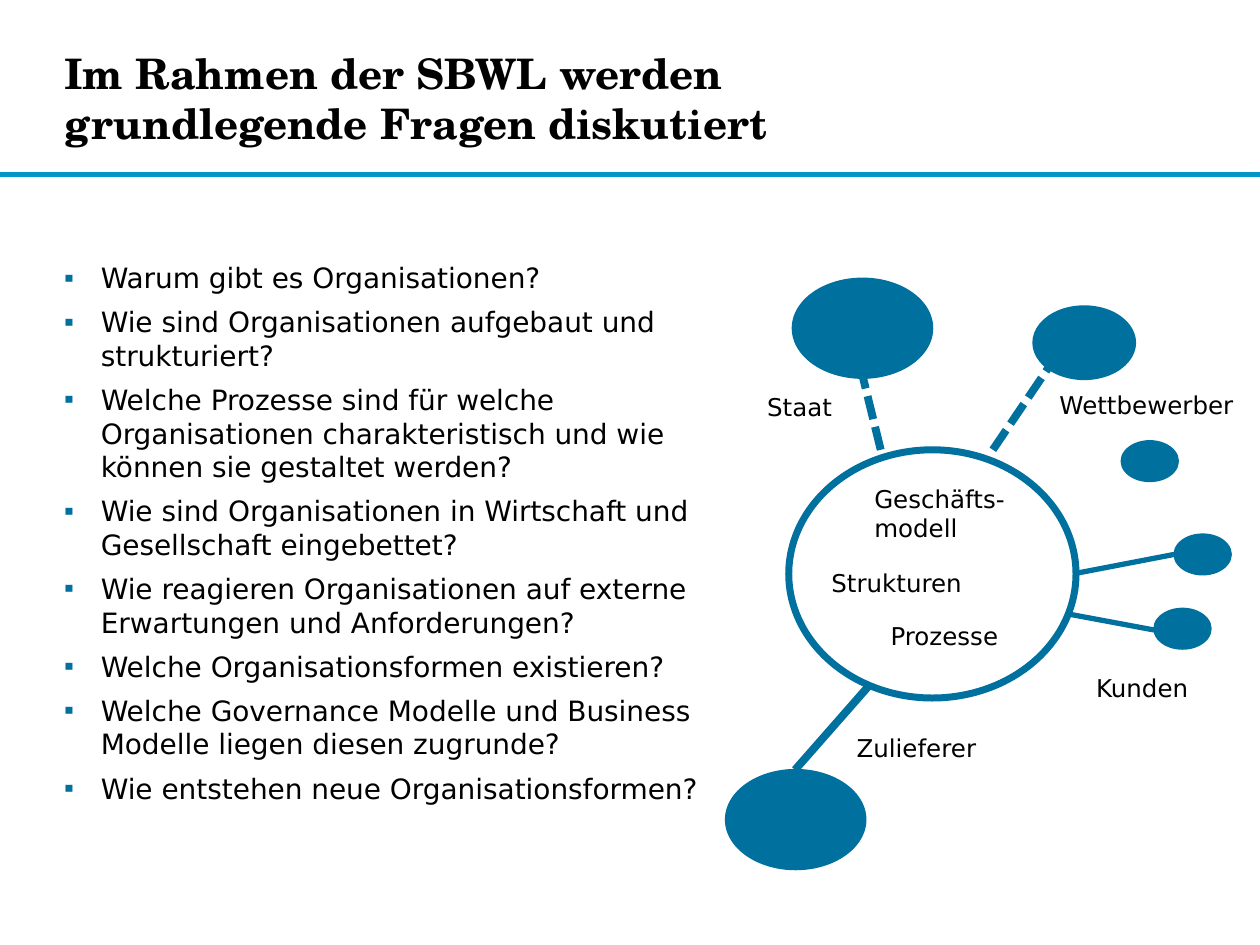
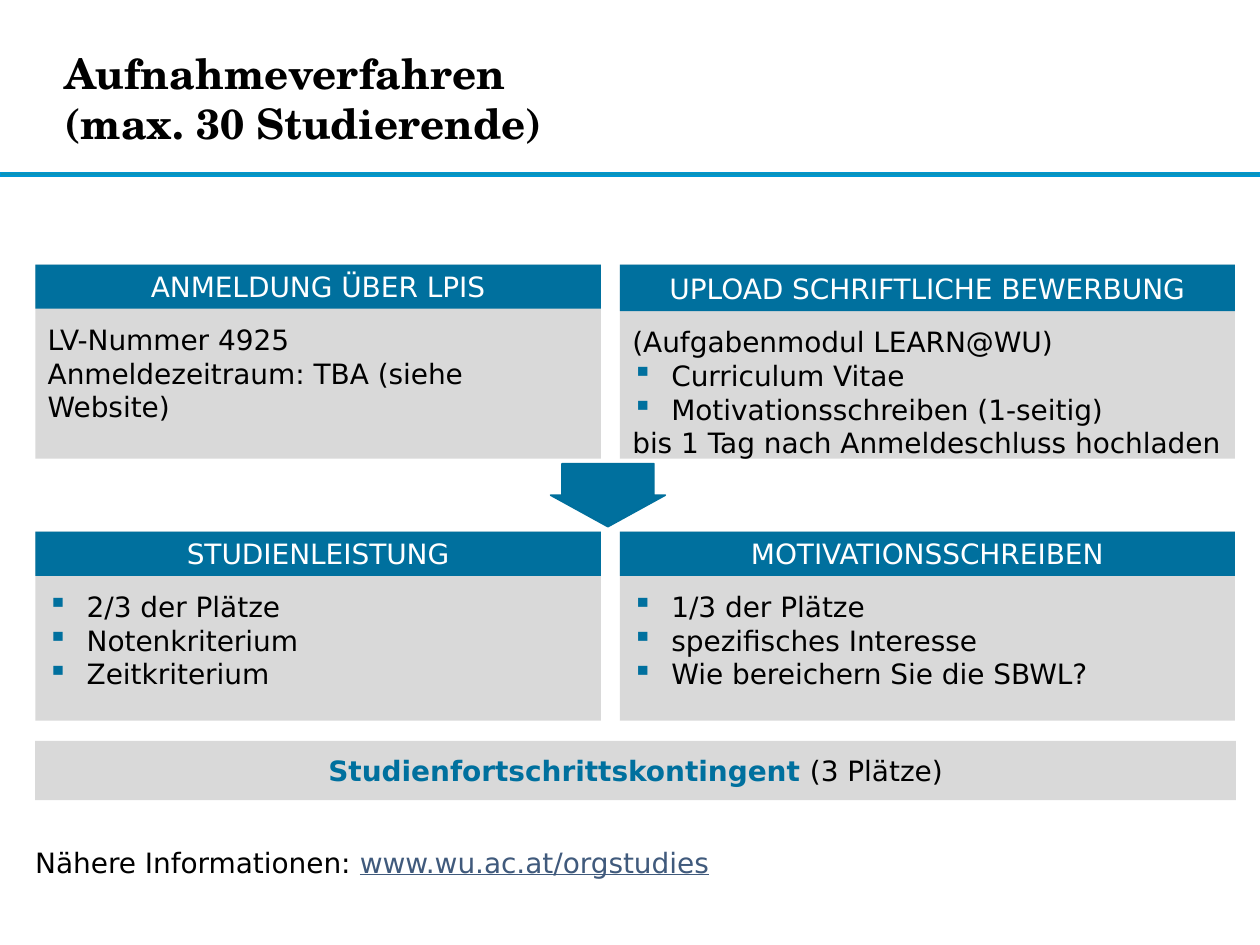
from lxml.etree import SubElement
from pptx import Presentation
from pptx.dml.color import RGBColor
from pptx.enum.dml import MSO_LINE
from pptx.enum.shapes import MSO_CONNECTOR, MSO_SHAPE
from pptx.enum.text import MSO_ANCHOR, MSO_AUTO_SIZE, PP_ALIGN
from pptx.oxml.ns import qn
from pptx.util import Inches, Pt

rgb = RGBColor.from_string
BLUE, GREY, BLACK, WHITE = "00709E", "D9D9D9", "000000", "FFFFFF"
BODY_FONT, TITLE_FONT = "DejaVu Sans", "TeX Gyre Schola"
BULLET = "▪"


def add_figure(slide, preset, at, fill, line=None, width=1):
    figure = slide.shapes.add_shape(preset, *map(Inches, at))
    figure.shadow.inherit = False
    figure.fill.solid()
    figure.fill.fore_color.rgb = rgb(fill)
    if line:
        figure.line.color.rgb = rgb(line)
        figure.line.width = Pt(width)
    else:
        figure.line.fill.background()
    return figure


def write(frame, lines, size=16, color=BLACK, font=BODY_FONT, bold=False,
          align=PP_ALIGN.LEFT, indent=0.31, after=0):
    """Fill a text frame; lines that start with the bullet sign become list items."""
    frame.text = "\n".join(line.removeprefix(BULLET) for line in lines)
    for paragraph, line in zip(frame.paragraphs, lines):
        paragraph.alignment = align
        paragraph.space_before, paragraph.space_after = Pt(0), Pt(after)
        if line.startswith(BULLET):
            props = paragraph._p.get_or_add_pPr()
            props.set("marL", str(Inches(indent)))
            props.set("indent", str(-Inches(indent)))
            SubElement(SubElement(props, qn("a:buClr")), qn("a:srgbClr"), val=BLUE)
            SubElement(props, qn("a:buChar"), char=BULLET)
        for run in paragraph.runs:
            run.font.size, run.font.name, run.font.bold = Pt(size), font, bold
            run.font.color.rgb = rgb(color)


prs = Presentation()
prs.slide_width, prs.slide_height = Inches(10), Inches(7.5)
questions_slide = prs.slides.add_slide(prs.slide_layouts[1])
admission_slide = prs.slides.add_slide(prs.slide_layouts[5])

# Shared: rule under the title, moved to the master, and the title style
title_rule = add_figure(questions_slide, MSO_SHAPE.RECTANGLE, (0, 1.37, 10, 0.03),
                        "0C94B7", "0096D3")
title_rule.element.nvSpPr.cNvPr.set("id", "20")
prs.slide_master.shapes.element.append(title_rule.element)

for slide, heading in (
    (questions_slide, "Im Rahmen der SBWL werden grundlegende Fragen diskutiert"),
    (admission_slide, "Aufnahmeverfahren\v(max. 30 Studierende)"),
):
    title = slide.shapes.title
    title.left, title.top, title.width, title.height = map(Inches, (0.51, 0.18, 7.27, 1.19))
    frame = title.text_frame
    frame.margin_left = frame.margin_right = frame.margin_top = frame.margin_bottom = 0
    frame.vertical_anchor = MSO_ANCHOR.MIDDLE
    frame.auto_size = MSO_AUTO_SIZE.NONE
    write(frame, [heading], 24, font=TITLE_FONT, bold=True)

# Slide 1: questions
questions = questions_slide.placeholders[1]
questions.left, questions.top, questions.width, questions.height = map(
    Inches, (0.51, 2.02, 5.21, 4.79))
frame = questions.text_frame
frame.margin_left = frame.margin_right = 0
frame.auto_size = MSO_AUTO_SIZE.NONE
write(frame, [BULLET + question for question in (
    "Warum gibt es Organisationen?",
    "Wie sind Organisationen aufgebaut und strukturiert?",
    "Welche Prozesse sind für welche Organisationen charakteristisch "
    "und wie können sie gestaltet werden?",
    "Wie sind Organisationen in Wirtschaft und Gesellschaft eingebettet?",
    "Wie reagieren Organisationen auf externe Erwartungen und Anforderungen?",
    "Welche Organisationsformen existieren?",
    "Welche Governance Modelle und Business Modelle liegen diesen zugrunde?",
    "Wie entstehen neue Organisationsformen?",
)], indent=0.29, after=6)

# Slide 1: organisation and its environment
add_figure(questions_slide, MSO_SHAPE.OVAL, (6.26, 3.57, 2.28, 1.97), WHITE, BLUE, 4)
large, medium, small = (1.11, 0.79), (0.81, 0.58), (0.45, 0.32)
for left, top, size in (
    (8.2, 2.43, medium),
    (6.29, 2.21, large),
    (5.76, 6.11, large),
    (8.9, 3.5, small),
    (9.16, 4.83, small),
    (9.32, 4.24, small),
):
    add_figure(questions_slide, MSO_SHAPE.OVAL, (left, top, *size), BLUE, BLUE)

for left, top, width, height, lines in (
    (6.97, 4.88, 1.07, 0.34, ["Prozesse"]),
    (6.5, 4.46, 1.27, 0.34, ["Strukturen"]),
    (6.7, 5.77, 1.16, 0.34, ["Zulieferer"]),
    (8.6, 5.29, 0.95, 0.34, ["Kunden"]),
    (8.31, 3.05, 1.59, 0.34, ["Wettbewerber"]),
    (5.99, 3.06, 0.73, 0.34, ["Staat"]),
    (6.84, 3.79, 1.25, 0.57, ["Geschäfts-", "modell"]),
):
    label = questions_slide.shapes.add_textbox(*map(Inches, (left, top, width, height)))
    label.text_frame.word_wrap = False
    label.text_frame.auto_size = MSO_AUTO_SIZE.SHAPE_TO_FIT_TEXT
    write(label.text_frame, lines, 14)

for ends, width, dashed in (
    ((6.31, 6.11, 6.89, 5.45), 4.5, False),
    ((8.46, 4.87, 9.16, 5), 3, False),
    ((8.54, 4.55, 9.32, 4.4), 3, False),
    ((6.99, 3.57, 6.85, 3), 4.5, True),
    ((7.88, 3.57, 8.32, 2.92), 4.5, True),
):
    relation = questions_slide.shapes.add_connector(MSO_CONNECTOR.STRAIGHT, *map(Inches, ends))
    relation.line.color.rgb = rgb(BLUE)
    relation.line.width = Pt(width)
    if dashed:
        relation.line.dash_style = MSO_LINE.SQUARE_DOT
    SubElement(relation.element.spPr, qn("a:effectLst"))

# Slide 2: four panels, each with a header strip
left_column, right_column = (0.28, 4.49), (4.92, 4.88)
for (left, width), top, height, strip_height, heading, lines in (
    (left_column, 2.1, 1.54, 0.35, "ANMELDUNG ÜBER LPIS",
     ["LV-Nummer 4925", "Anmeldezeitraum: TBA (siehe Website)"]),
    (right_column, 2.1, 1.54, 0.37, "UPLOAD SCHRIFTLICHE BEWERBUNG",
     ["(Aufgabenmodul LEARN@WU)", "▪Curriculum Vitae",
      "▪Motivationsschreiben (1-seitig)", "bis 1 Tag nach Anmeldeschluss hochladen"]),
    (left_column, 4.22, 1.5, 0.35, "STUDIENLEISTUNG",
     ["▪2/3 der Plätze", "▪Notenkriterium", "▪Zeitkriterium"]),
    (right_column, 4.22, 1.5, 0.35, "MOTIVATIONSSCHREIBEN",
     ["▪1/3 der Plätze", "▪spezifisches Interesse", "▪Wie bereichern Sie die SBWL?"]),
):
    panel = add_figure(admission_slide, MSO_SHAPE.RECTANGLE, (left, top, width, height), GREY)
    panel.text_frame.vertical_anchor = MSO_ANCHOR.TOP
    panel.text_frame.margin_top = Inches(strip_height + 0.11)
    panel.text_frame.margin_bottom = 0
    write(panel.text_frame, lines)
    strip = add_figure(admission_slide, MSO_SHAPE.RECTANGLE,
                       (left, top, width, strip_height), BLUE)
    write(strip.text_frame, [heading], color=WHITE, align=PP_ALIGN.CENTER)

step_arrow = add_figure(admission_slide, MSO_SHAPE.DOWN_ARROW, (4.37, 3.68, 0.91, 0.5),
                        BLUE, "006F9C")
step_arrow.adjustments[0] = 0.8
step_arrow.adjustments[1] = 0.5

# Slide 2: extra quota and further information
quota = add_figure(admission_slide, MSO_SHAPE.RECTANGLE, (0.28, 5.88, 9.53, 0.47), GREY)
write(quota.text_frame, ["Studienfortschrittskontingent "], color=BLUE, bold=True,
      align=PP_ALIGN.CENTER)
places = quota.text_frame.paragraphs[0].add_run()
places.text = "(3 Plätze)"
places.font.color.rgb = rgb(BLACK)

information = admission_slide.shapes.add_textbox(*map(Inches, (0.28, 6.66, 7.4, 0.43)))
information.text_frame.word_wrap = True
information.text_frame.margin_left = information.text_frame.margin_right = 0
write(information.text_frame, ["Nähere Informationen: "])
address = information.text_frame.paragraphs[0].add_run()
address.text = "www.wu.ac.at/orgstudies"
address.font.color.rgb = rgb("405A7C")
address.font.underline = True

for run in (places, address):
    run.font.size, run.font.name = Pt(16), BODY_FONT

prs.save("out.pptx")
